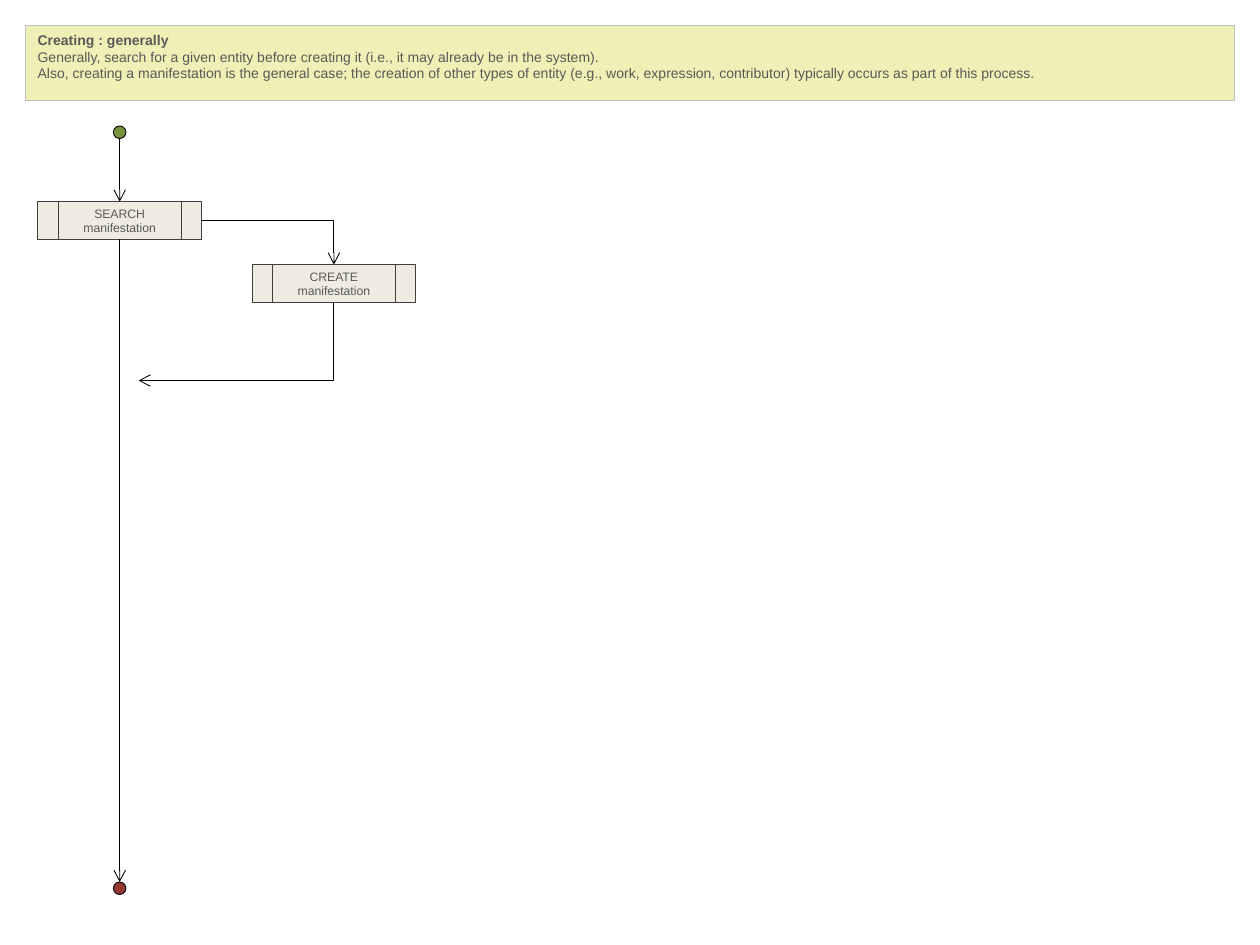
from lxml import etree
from pptx import Presentation
from pptx.dml.color import RGBColor
from pptx.enum import shapes, text
from pptx.oxml.ns import qn
from pptx.util import Inches, Pt

FONT = "Arial"
TEXT_COLOR = "595959"
BLACK = "000000"
AXIS = 0.95  # centre of the main flow
DOT = 0.1
PROCESS_WIDTH, PROCESS_HEIGHT = 1.3, 0.3

NOTE = [
    "Creating : generally",
    "Generally, search for a given entity before creating it "
    "(i.e., it may already be in the system).",
    "Also, creating a manifestation is the general case; the creation of other "
    "types of entity (e.g., work, expression, contributor) typically occurs as "
    "part of this process.",
]


def color(value):
    return RGBColor.from_string(value)


def add_box(slide, kind, left, top, width, height, fill, line):
    box = slide.shapes.add_shape(
        kind, Inches(left), Inches(top), Inches(width), Inches(height))
    box.shadow.inherit = False
    box.fill.solid()
    box.fill.fore_color.rgb = color(fill)
    box.line.color.rgb = color(line)
    box.line.width = Pt(0.5)
    return box


def write(box, lines, size, align, anchor):
    frame = box.text_frame
    frame.word_wrap = True
    frame.vertical_anchor = anchor
    for index, line in enumerate(lines):
        para = frame.add_paragraph() if index else frame.paragraphs[0]
        para.text = line
        para.alignment = align
        para.font.name = FONT
        para.font.size = Pt(size)
        para.font.color.rgb = color(TEXT_COLOR)


def add_dot(slide, top, fill):
    add_box(slide, shapes.MSO_SHAPE.OVAL, AXIS - DOT / 2, top, DOT, DOT, fill, BLACK)


def add_process(slide, left, top, label):
    box = add_box(slide, shapes.MSO_SHAPE.FLOWCHART_PREDEFINED_PROCESS,
                  left, top, PROCESS_WIDTH, PROCESS_HEIGHT, "EEECE1", "404040")
    write(box, [label], 7, text.PP_ALIGN.CENTER, text.MSO_ANCHOR.MIDDLE)
    return box


def add_arrow(slide, start, end, kind=shapes.MSO_CONNECTOR.STRAIGHT):
    arrow = slide.shapes.add_connector(
        kind, *(Inches(value) for value in (*start, *end)))
    arrow.line.color.rgb = color(BLACK)
    arrow.line.width = Pt(0.5)
    etree.SubElement(arrow.line._get_or_add_ln(), qn("a:tailEnd"), type="arrow")
    etree.SubElement(arrow._element.spPr, qn("a:effectLst"))
    return arrow


def add_corner_arrow(slide, start, end, down_first=False):
    """Arrow with one corner; down_first turns the preset a quarter clockwise."""
    if down_first:
        # The unrotated frame shares its centre with the turned one.
        center_x, center_y = (start[0] + end[0]) / 2, (start[1] + end[1]) / 2
        half_width, half_height = abs(end[1] - start[1]) / 2, abs(end[0] - start[0]) / 2
        start = center_x - half_width, center_y - half_height
        end = center_x + half_width, center_y + half_height
    arrow = add_arrow(slide, start, end, shapes.MSO_CONNECTOR.ELBOW)
    properties = arrow._element.spPr
    properties.find(qn("a:prstGeom")).set("prst", "bentConnector2")
    if down_first:
        properties.find(qn("a:xfrm")).set("rot", str(90 * 60000))


def main():
    deck = Presentation()
    deck.slide_width, deck.slide_height = Inches(10), Inches(7.5)
    slide = deck.slides.add_slide(deck.slide_layouts[6])

    # Explanatory note
    note = add_box(slide, shapes.MSO_SHAPE.RECTANGLE, 0.2, 0.2, 9.6, 0.6,
                   "F0F0B6", "BFBFBF")
    write(note, NOTE, 8, text.PP_ALIGN.LEFT, text.MSO_ANCHOR.TOP)
    note.text_frame.paragraphs[0].font.bold = True

    # Start, end and process steps
    add_dot(slide, 1, "77933C")
    add_dot(slide, 7, "953735")
    search = add_process(slide, 0.3, 1.6, "SEARCH manifestation")
    add_process(slide, 2, 2.1, "CREATE manifestation")

    # Main flow
    add_arrow(slide, (AXIS, 1.1), (AXIS, 1.6)).end_connect(search, 0)
    add_arrow(slide, (AXIS, 1.9), (AXIS, 7)).begin_connect(search, 2)

    # Branch through creation and back
    add_corner_arrow(slide, (1.6, 1.75), (2.65, 2.1))
    add_corner_arrow(slide, (2.65, 2.4), (1.1, 3.02), down_first=True)

    deck.save("out.pptx")


if __name__ == "__main__":
    main()
